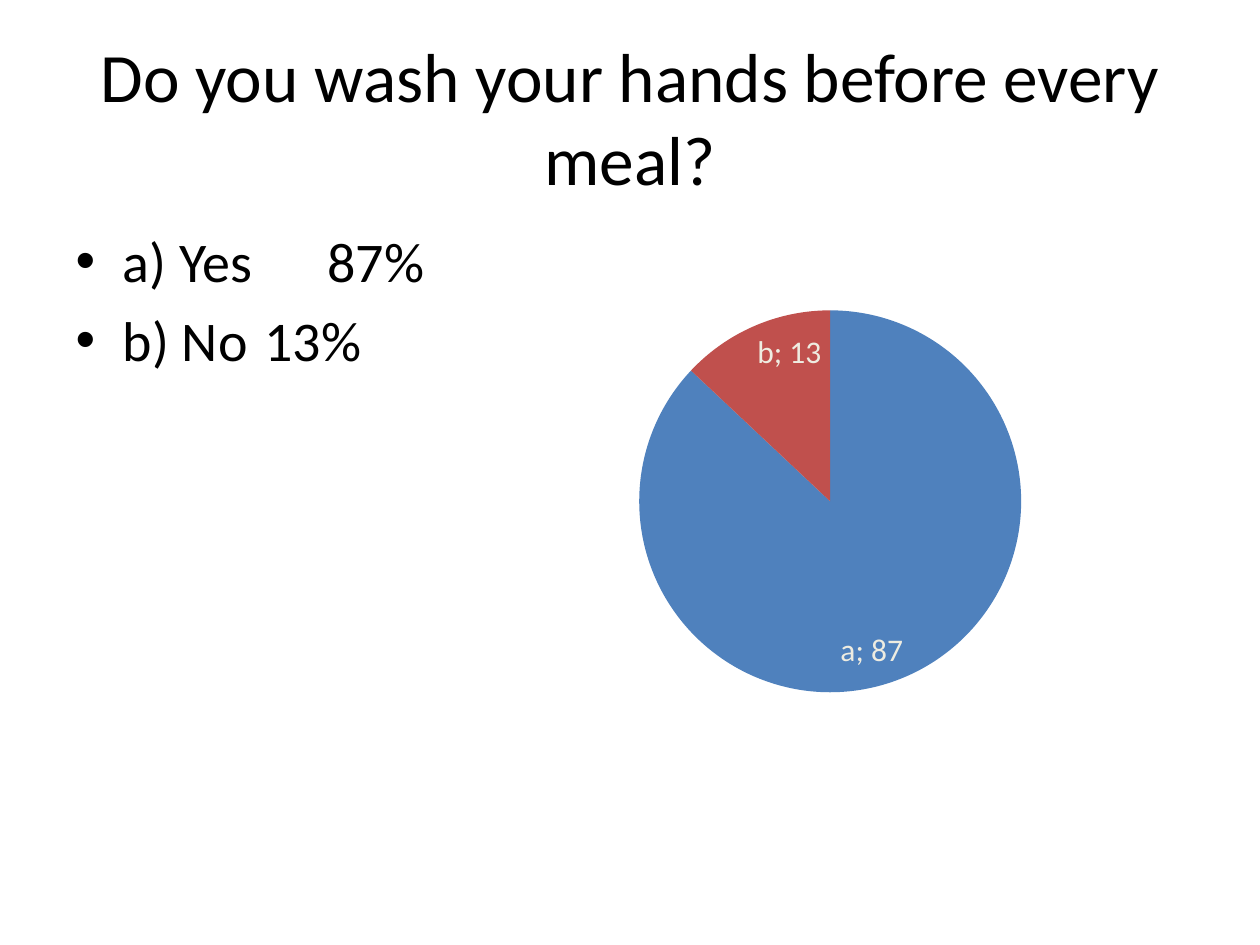
from dataclasses import dataclass

from lxml import etree
from pptx import Presentation
from pptx import util as u
from pptx.chart import data
from pptx.dml import color
from pptx.enum import chart as ch
from pptx.enum import text
from pptx.oxml import ns


@dataclass(frozen=True)
class Theme:
    font: str = "Calibri"
    ink: str = "000000"
    label: str = "EEECE1"
    slices: tuple = ("4F81BD", "C0504D")
    title_size: float = 39.6
    body_size: float = 32
    label_size: float = 18
    chart_size: float = 10


class SlideBuilder:
    def __init__(self, page, theme):
        self.page = page
        self.theme = theme

    def style(self, font, size, ink):
        font.name = self.theme.font
        font.size = u.Pt(size)
        font.color.rgb = color.RGBColor.from_string(ink)

    def fill_placeholder(self, box, place, lines, size, anchor):
        box.left, box.top, box.width, box.height = map(u.Inches, place)
        frame = box.text_frame
        frame.text = "\n".join(lines)
        frame.auto_size = text.MSO_AUTO_SIZE.NONE
        frame.vertical_anchor = anchor
        for para in frame.paragraphs:
            self.style(para.font, size, self.theme.ink)
        return frame

    def title(self, place, line):
        frame = self.fill_placeholder(self.page.shapes.title, place, [line],
                                      self.theme.title_size, text.MSO_ANCHOR.MIDDLE)
        frame.paragraphs[0].alignment = text.PP_ALIGN.CENTER

    def bullets(self, place, lines):
        self.fill_placeholder(self.page.placeholders[1], place, lines,
                              self.theme.body_size, text.MSO_ANCHOR.TOP)

    def pie(self, place, answers, plot_area):
        chart_data = data.CategoryChartData(number_format="0")
        chart_data.categories = list(answers)
        chart_data.add_series("Series 1", list(answers.values()))
        chart = self.page.shapes.add_chart(
            ch.XL_CHART_TYPE.PIE, *map(u.Inches, place), chart_data).chart
        chart.has_title = False
        chart.has_legend = False
        self.style(chart.font, self.theme.chart_size, self.theme.ink)
        plot = chart.plots[0]
        plot.vary_by_categories = True
        for index, fill_color in enumerate(self.theme.slices):
            fill = plot.series[0].points[index].format.fill
            fill.solid()
            fill.fore_color.rgb = color.RGBColor.from_string(fill_color)
        self.label_slices(plot.series[0].data_labels)
        self.place_plot(chart, plot_area)

    def label_slices(self, labels):
        labels.show_value = True
        labels.show_category_name = True
        labels.show_percentage = False
        labels.number_format = "0"
        labels.number_format_is_linked = False
        labels.position = ch.XL_LABEL_POSITION.INSIDE_END
        self.style(labels.font, self.theme.label_size, self.theme.label)
        separator = etree.Element(ns.qn("c:separator"))
        separator.text = "; "
        labels._element.find(ns.qn("c:showBubbleSize")).addnext(separator)

    def place_plot(self, chart, plot_area):
        """Fix the inner plot area, given as fractions of the chart."""
        area = chart._chartSpace.find(".//" + ns.qn("c:plotArea"))
        layout = area.find(ns.qn("c:layout"))
        if layout is None:
            layout = etree.Element(ns.qn("c:layout"))
            area.insert(0, layout)
        manual = etree.SubElement(layout, ns.qn("c:manualLayout"))
        settings = [("layoutTarget", "inner"), ("xMode", "edge"), ("yMode", "edge"),
                    *zip("xywh", plot_area)]
        for name, value in settings:
            etree.SubElement(manual, ns.qn("c:" + name), val=str(value))


def main():
    deck = Presentation()
    deck.slide_width, deck.slide_height = u.Inches(10), u.Inches(7.5)
    builder = SlideBuilder(deck.slides.add_slide(deck.slide_layouts[1]), Theme())
    builder.title((0.5, 0.3, 9, 1.25), "Do you wash your hands before every meal?")
    builder.bullets((0.5, 1.75, 9, 4.95), ["a) Yes \t87%", "b) No\t13%"])
    builder.pie((3.98, 2.18, 4.97, 3.87), {"a": 87, "b": 13}, (0.22, 0.04, 0.61, 0.85))
    deck.save("out.pptx")


if __name__ == "__main__":
    main()
